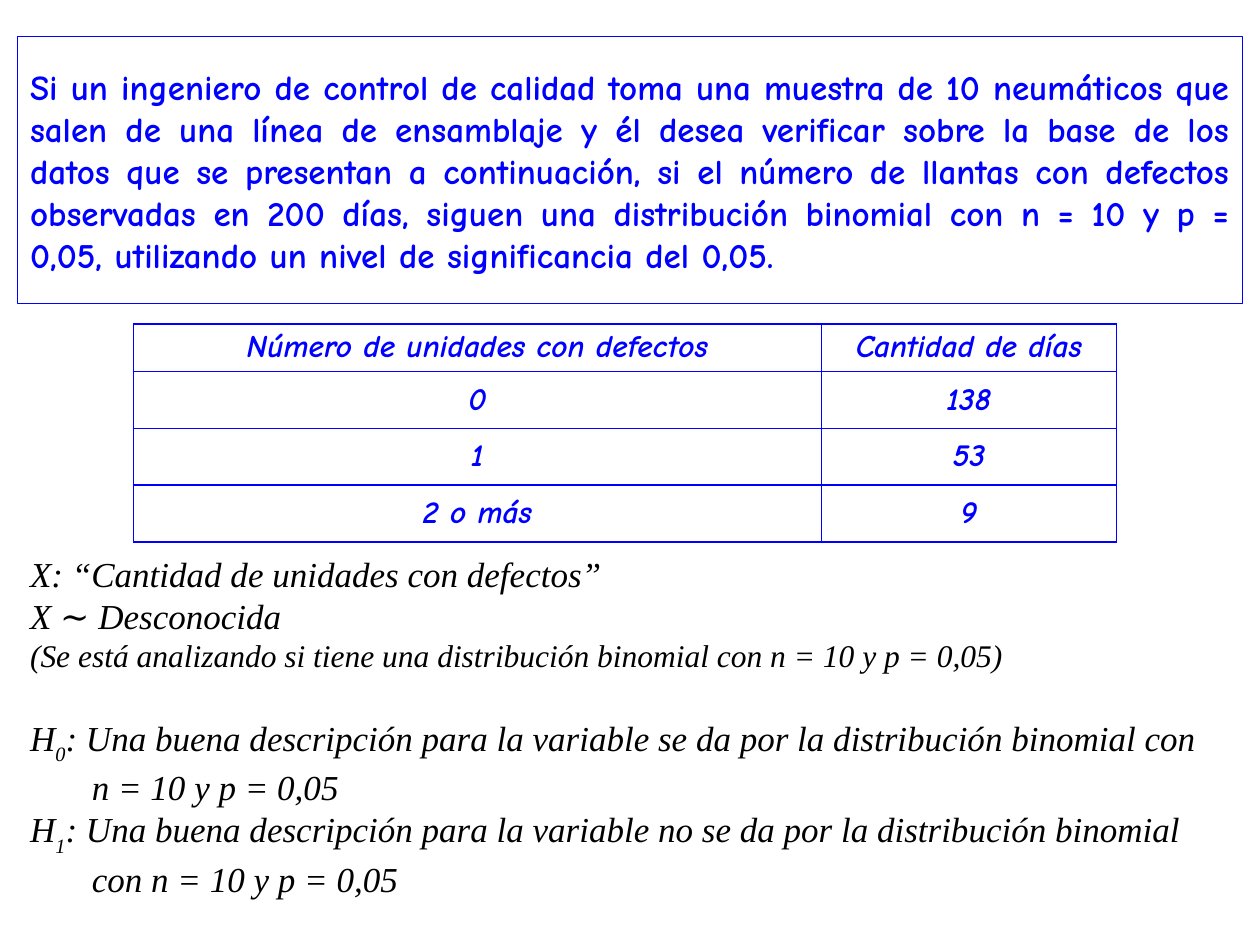
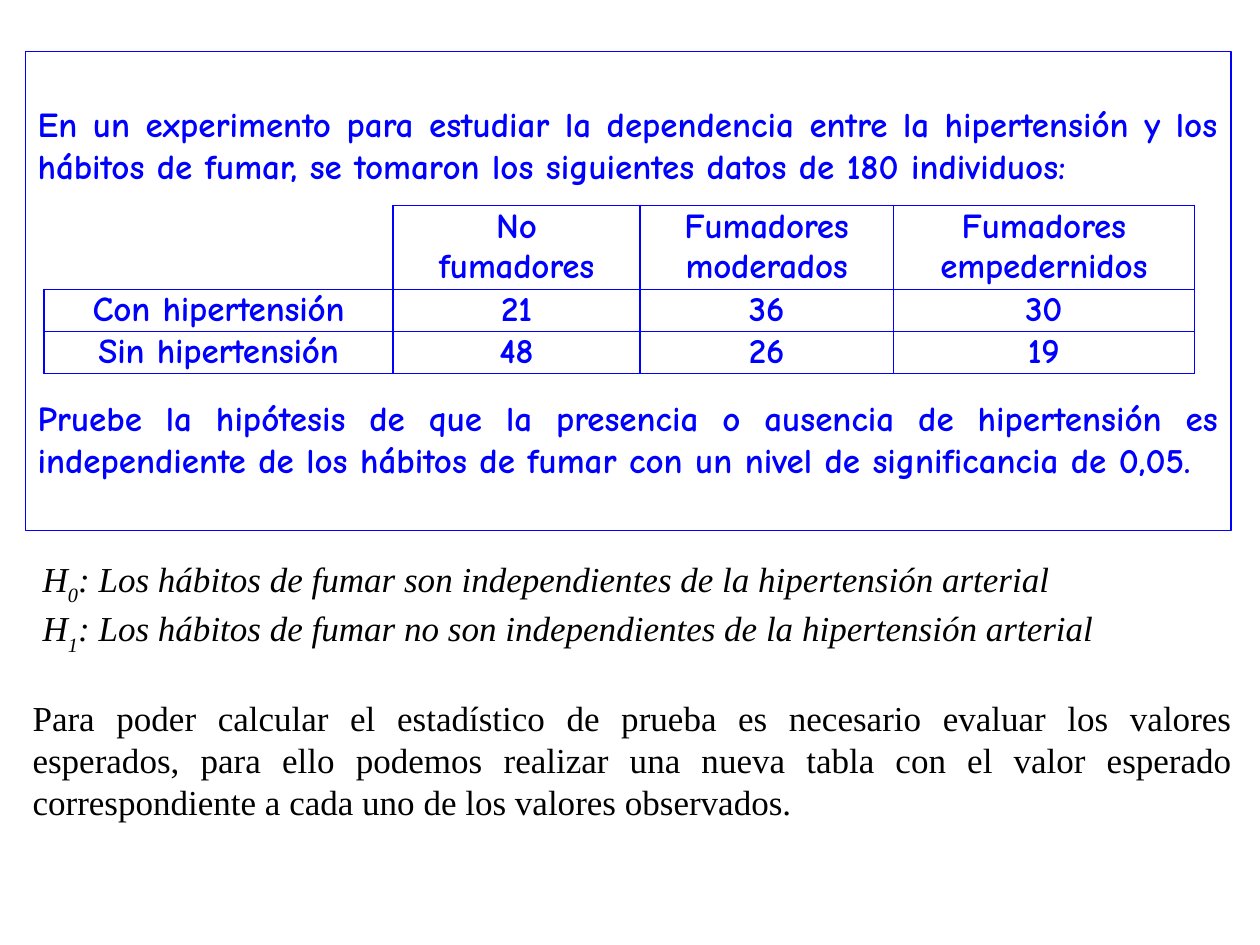
from dataclasses import dataclass
from typing import NamedTuple

from lxml.etree import SubElement
from pptx import Presentation
from pptx.dml.color import RGBColor
from pptx.enum.shapes import MSO_SHAPE as Shape
from pptx.enum.text import MSO_ANCHOR as Anchor
from pptx.enum.text import MSO_AUTO_SIZE as AutoSize
from pptx.enum.text import PP_ALIGN as Align
from pptx.oxml.ns import qn
from pptx.util import Pt

# Shared scale, colours and formats
EMU_PER_PX = 9144  # 100 px to the inch
BLUE = RGBColor(0x00, 0x00, 0xFF)
BLACK = RGBColor(0x00, 0x00, 0x00)
STATEMENT = {"name": "Comic Neue", "size": Pt(20), "bold": True}
COUNTS = STATEMENT | {"size": Pt(18), "italic": True}
PLAIN = {"name": "Times New Roman", "size": Pt(20)}
ANALYSIS = PLAIN | {"italic": True}


class Area(NamedTuple):
    left: int
    top: int
    width: int
    height: int


class Run(NamedTuple):
    text: str
    subscript: bool = False


@dataclass(frozen=True)
class Line:
    runs: tuple[Run, ...]
    size: int | None = None
    space_before: int = 0
    indent: int = 0


@dataclass(frozen=True)
class TextBlock:
    area: Area
    lines: tuple[Line, ...]
    style: dict
    colour: RGBColor = BLACK
    framed: bool = False


@dataclass(frozen=True)
class Grid:
    area: Area
    columns: tuple[int, ...]
    heights: tuple[int, ...]
    rows: tuple[tuple[str, ...], ...]
    style: dict
    side_margin: int
    tracking: int = 0


def px(length: int) -> int:
    return length * EMU_PER_PX


def line(text: str, **layout) -> Line:
    return Line((Run(text),), **layout)


def hypothesis(number: int, text: str, **layout) -> Line:
    return Line((Run("H"), Run(str(number), True), Run(f": {text}")), **layout)


def apply(target, values: dict) -> None:
    for name, value in values.items():
        setattr(target, name, value)


def write_run(paragraph, text: str, style: dict, colour: RGBColor):
    run = paragraph.add_run()
    run.text = text
    apply(run.font, style)
    run.font.color.rgb = colour
    return run._r.get_or_add_rPr()


def draw_text(slide, block: TextBlock) -> None:
    place = [px(length) for length in block.area]
    if block.framed:
        box = slide.shapes.add_shape(Shape.RECTANGLE, *place)
        box.shadow.inherit = False
        box.fill.background()
        box.line.color.rgb = block.colour
        box.line.width = Pt(0.75)
    else:
        box = slide.shapes.add_textbox(*place)
    frame = box.text_frame
    apply(frame, {"word_wrap": True, "vertical_anchor": Anchor.MIDDLE,
                  "auto_size": AutoSize.SHAPE_TO_FIT_TEXT})
    for index, content in enumerate(block.lines):
        paragraph = frame.add_paragraph() if index else frame.paragraphs[0]
        apply(paragraph, {"alignment": Align.JUSTIFY,
                          "space_before": Pt(content.space_before)})
        if content.indent:
            paragraph._p.get_or_add_pPr().set("marL", str(px(content.indent)))
        style = dict(block.style)
        if content.size:
            style["size"] = Pt(content.size)
        for part in content.runs:
            properties = write_run(paragraph, part.text, style, block.colour)
            if part.subscript:
                properties.set("baseline", "-30000")


def draw_borders(cell, visible: str) -> None:
    properties = cell._tc.get_or_add_tcPr()
    for side in "LRTB":
        border = SubElement(properties, qn(f"a:ln{side}"), w=str(Pt(1)))
        if side in visible:
            fill = SubElement(border, qn("a:solidFill"))
            SubElement(fill, qn("a:srgbClr"), val=str(BLUE))
        else:
            SubElement(border, qn("a:noFill"))


def draw_grid(slide, grid: Grid) -> None:
    place = [px(length) for length in grid.area]
    table = slide.shapes.add_table(
        len(grid.rows), len(grid.columns), *place).table
    apply(table, {"first_row": False, "horz_banding": False})
    for column, width in zip(table.columns, grid.columns):
        column.width = px(width)
    margin = px(grid.side_margin)
    for row, height, texts in zip(table.rows, grid.heights, grid.rows):
        row.height = px(height)
        for cell, text in zip(row.cells, texts):
            apply(cell, {"margin_left": margin, "margin_right": margin,
                         "margin_top": 0, "margin_bottom": 0,
                         "vertical_anchor": Anchor.MIDDLE})
            # An empty corner keeps only the sides it shares
            draw_borders(cell, "LRTB" if text else "RB")
            cell.fill.background()
            if not text:
                continue
            frame = cell.text_frame
            for index, label in enumerate(text.split("\n")):
                paragraph = frame.add_paragraph() if index else frame.paragraphs[0]
                paragraph.alignment = Align.CENTER
                properties = write_run(paragraph, label, grid.style, BLUE)
                if grid.tracking:
                    properties.set("spc", str(grid.tracking))


# Slide 1: goodness of fit for defective tyres
TYRES = (
    TextBlock(Area(14, 29, 972, 212), (
        line("Si un ingeniero de control de calidad toma una muestra de 10 "
             "neumáticos que salen de una línea de ensamblaje y él desea "
             "verificar sobre la base de los datos que se presentan a "
             "continuación, si el número de llantas con defectos observadas "
             "en 200 días, siguen una distribución binomial con n = 10 y "
             "p = 0,05, utilizando un nivel de significancia del 0,05."),
    ), STATEMENT, BLUE, framed=True),
    TextBlock(Area(14, 438, 972, 276), (
        line("X: “Cantidad de unidades con defectos”"),
        line("X ∼ Desconocida"),
        line("(Se está analizando si tiene una distribución binomial con "
             "n = 10 y p = 0,05)", size=18),
        hypothesis(0, "Una buena descripción para la variable se da por la "
                      "distribución binomial con", space_before=24),
        line("n = 10 y p = 0,05", indent=49),
        hypothesis(1, "Una buena descripción para la variable no se da por "
                      "la distribución binomial"),
        line("con n = 10 y p = 0,05", indent=49),
    ), ANALYSIS),
    Grid(Area(106, 257, 780, 173), (546, 234), (38, 45, 45, 45), (
        ("Número de unidades con defectos", "Cantidad de días"),
        ("0", "138"),
        ("1", "53"),
        ("2 o más", "9"),
    ), COUNTS, side_margin=5),
)

# Slide 2: independence of hypertension and smoking
SMOKING = (
    Grid(Area(35, 163, 913, 128), (277, 196, 201, 239), (64, 32, 32), (
        ("", "No\nfumadores", "Fumadores\nmoderados",
         "Fumadores\nempedernidos"),
        ("Con hipertensión", "21", "36", "30"),
        ("Sin hipertensión", "48", "26", "19"),
    ), STATEMENT, side_margin=7, tracking=-10),
    TextBlock(Area(20, 41, 957, 380), (
        line("En un experimento para estudiar la dependencia entre la "
             "hipertensión y los hábitos de fumar, se tomaron los siguientes "
             "datos de 180 individuos:"),
        line("Pruebe la hipótesis de que la presencia o ausencia de "
             "hipertensión es independiente de los hábitos de fumar con un "
             "nivel de significancia de 0,05.", space_before=120),
    ), STATEMENT, BLUE, framed=True),
    TextBlock(Area(24, 443, 957, 77), (
        hypothesis(0, "Los hábitos de fumar son independientes de la "
                      "hipertensión arterial"),
        hypothesis(1, "Los hábitos de fumar no son independientes de la "
                      "hipertensión arterial"),
    ), ANALYSIS),
    TextBlock(Area(16, 547, 972, 111), (
        line("Para poder calcular el estadístico de prueba es necesario "
             "evaluar los valores esperados, para ello podemos realizar una "
             "nueva tabla con el valor esperado correspondiente a cada uno "
             "de los valores observados."),
    ), PLAIN),
)


def main() -> None:
    deck = Presentation()
    apply(deck, {"slide_width": px(1000), "slide_height": px(750)})
    for contents in (TYRES, SMOKING):
        slide = deck.slides.add_slide(deck.slide_layouts[6])
        for part in contents:
            draw = draw_grid if isinstance(part, Grid) else draw_text
            draw(slide, part)
    deck.save("out.pptx")


if __name__ == "__main__":
    main()
